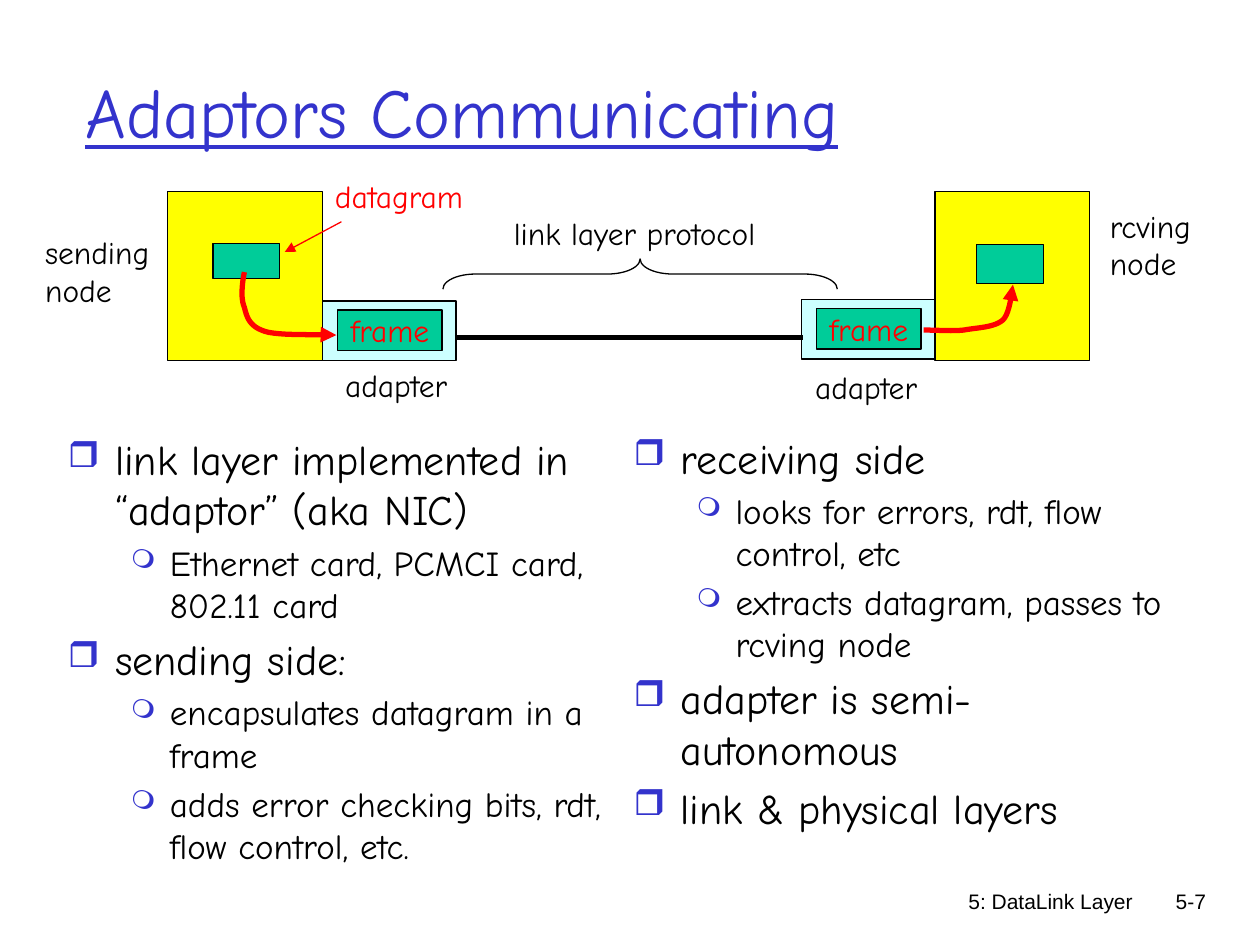
from dataclasses import dataclass

from lxml import etree
from pptx import Presentation
from pptx.dml.color import RGBColor
from pptx.enum.shapes import MSO_CONNECTOR, MSO_SHAPE
from pptx.enum.text import MSO_ANCHOR, PP_ALIGN
from pptx.oxml.ns import qn
from pptx.util import Emu, Inches, Pt

STRAIGHT = MSO_CONNECTOR.STRAIGHT
RECTANGLE, BRACE = MSO_SHAPE.RECTANGLE, MSO_SHAPE.LEFT_BRACE
TOP, MIDDLE = MSO_ANCHOR.TOP, MSO_ANCHOR.MIDDLE
LEFT, CENTER, RIGHT = PP_ALIGN.LEFT, PP_ALIGN.CENTER, PP_ALIGN.RIGHT

COLUMNS, ROWS = 100, 75
WIDTH, HEIGHT = Inches(10), Inches(7.5)
COLORS = {"ink": "000000", "blue": "3333CC", "red": "FF0000", "node": "FFFF00",
          "adapter": "CCFFFF", "packet": "00CC99"}
HAND, PLAIN = "Comic Neue", "Arial"
THIN, THICK = 0.75, 3
CURVE_STEPS = 12


@dataclass
class Area:
    """A rectangle in grid columns and rows."""
    column: float
    row: float
    columns: float
    rows: float

    def lengths(self) -> tuple:
        return across(self.column), down(self.row), across(self.columns), down(self.rows)


@dataclass
class Label:
    text: str
    area: Area
    size: float = 18
    color: str = "ink"
    font: str = HAND
    align: PP_ALIGN = LEFT
    anchor: MSO_ANCHOR = TOP
    underline: bool = False


@dataclass
class Block:
    area: Area
    fill: str
    text: str = ""


@dataclass
class Bullet:
    """How one outline level looks; lengths in grid columns."""
    mark: str
    mark_percent: int
    size: float
    margin: float
    hanging: float


BULLETS = [Bullet("❒", 85, 24, 3.75, 3.75), Bullet("❍", 75, 20, 8.1, 3.1)]

LABELS = [
    Label("5: DataLink Layer", Area(59.2, 70, 31.7, 5), 12, font=PLAIN, align=RIGHT),
    Label("5-7", Area(89.3, 70, 7.4, 5), 12, font=PLAIN, align=RIGHT),
    Label("Adaptors Communicating", Area(5.8, 2.5, 85, 12.5), 40, "blue",
          anchor=MIDDLE, underline=True),
    Label("sending\nnode", Area(2.6, 18, 10.7, 7)),
    Label("rcving\nnode", Area(87.1, 15.9, 9, 7)),
    Label("datagram", Area(25.6, 13.6, 13, 4), color="red"),
    Label("adapter", Area(26.4, 28.6, 11.1, 4)),
    Label("adapter", Area(63.7, 28.7, 11.1, 4)),
    Label("link layer protocol", Area(39.8, 16.5, 23, 4)),
]

OUTLINES = [
    (Area(4.4, 33.9, 44.5, 33.1), [
        (0, "link layer implemented in “adaptor” (aka NIC)"),
        (1, "Ethernet card, PCMCI card, 802.11 card"),
        (0, "sending side:"),
        (1, "encapsulates datagram in a frame"),
        (1, "adds error checking bits, rdt, flow control, etc.")]),
    (Area(49.3, 33.8, 44.7, 32.7), [
        (0, "receiving side"),
        (1, "looks for errors, rdt, flow control, etc"),
        (1, "extracts datagram, passes to rcving node"),
        (0, "adapter is semi-autonomous"),
        (0, "link & physical layers")]),
]


def adapter_blocks(column: float, row: float) -> list[Block]:
    return [Block(Area(column, row, 10.6, 4.7), "adapter"),
            Block(Area(column + 1.2, row + 0.7, 8.3, 3.2), "packet", "frame")]


BLOCKS = [
    *adapter_blocks(25.6, 23.9),
    *adapter_blocks(63.6, 23.8),
    Block(Area(74.2, 15.2, 12.3, 13.4), "node"),
    Block(Area(77.5, 19.4, 5.3, 3.1), "packet"),
    Block(Area(13.3, 15.2, 12.3, 13.4), "node"),
    Block(Area(16.9, 19.3, 5.3, 2.8), "packet"),
]

# Each path is a start point followed by groups of three Bézier points.
PACKET_PATHS = [
    [(19.4, 21.6), (19.2, 22.6), (19.1, 23.7), (19.4, 24.4), (19.6, 25.2),
     (19.8, 25.9), (21, 26.3), (22.2, 26.7), (25.7, 26.5), (26.7, 26.6)],
    [(73.3, 26.2), (74.4, 26.2), (75.5, 26.3), (76.5, 26.2), (77.6, 26),
     (78.9, 26), (79.6, 25.4), (80.2, 24.8), (80.3, 23), (80.4, 22.6)],
]


def across(columns: float) -> Emu:
    return Emu(round(WIDTH * columns / COLUMNS))


def down(rows: float) -> Emu:
    return Emu(round(HEIGHT * rows / ROWS))


def paint(color: str) -> RGBColor:
    return RGBColor.from_string(COLORS[color])


def style_line(shape, color: str, width: float, arrow: bool = False) -> None:
    shape.line.color.rgb = paint(color)
    shape.line.width = Pt(width)
    if arrow:
        etree.SubElement(shape.line._get_or_add_ln(), qn("a:tailEnd"), type="triangle")


def write(para, text: str, size: float, color: str, font: str = HAND,
          underline: bool = False) -> None:
    span = para.add_run()
    span.text = text
    span.font.color.rgb = paint(color)
    formats = {"size": Pt(size), "name": font, "underline": underline}
    for name, value in formats.items():
        setattr(span.font, name, value)


def paragraphs(frame, count: int) -> list:
    return [frame.paragraphs[0]] + [frame.add_paragraph() for _ in range(count - 1)]


def add_label(page, label: Label) -> None:
    frame = page.shapes.add_textbox(*label.area.lengths()).text_frame
    frame.word_wrap = True
    frame.vertical_anchor = label.anchor
    lines = label.text.split("\n")
    for para, line in zip(paragraphs(frame, len(lines)), lines):
        para.alignment = label.align
        write(para, line, label.size, label.color, label.font, label.underline)


def add_outline(page, area: Area, items: list[tuple[int, str]]) -> None:
    frame = page.shapes.add_textbox(*area.lengths()).text_frame
    frame.word_wrap = True
    for para, (level, text) in zip(paragraphs(frame, len(items)), items):
        bullet = BULLETS[level]
        para.level = level
        para.space_before = Pt(bullet.size * 0.2)
        write(para, text, bullet.size, "ink")
        properties = para._p.get_or_add_pPr()
        properties.set("marL", str(across(bullet.margin)))
        properties.set("indent", str(-across(bullet.hanging)))
        tint = etree.SubElement(properties, qn("a:buClr"))
        etree.SubElement(tint, qn("a:srgbClr"), val=COLORS["blue"])
        etree.SubElement(properties, qn("a:buSzPct"), val=str(bullet.mark_percent * 1000))
        etree.SubElement(properties, qn("a:buChar"), char=bullet.mark)


def add_block(page, block: Block) -> None:
    box = page.shapes.add_shape(RECTANGLE, *block.area.lengths())
    box.shadow.inherit = False
    box.fill.solid()
    box.fill.fore_color.rgb = paint(block.fill)
    style_line(box, "ink", THIN)
    if block.text:
        frame = box.text_frame
        formats = {"word_wrap": False, "vertical_anchor": MIDDLE}
        for name, value in formats.items():
            setattr(frame, name, value)
        frame.paragraphs[0].alignment = CENTER
        write(frame.paragraphs[0], block.text, 18, "red")


def add_straight(page, start: tuple, end: tuple, color: str, width: float,
                 arrow: bool = False) -> None:
    line = page.shapes.add_connector(STRAIGHT, across(start[0]), down(start[1]),
                                     across(end[0]), down(end[1]))
    style_line(line, color, width, arrow)
    etree.SubElement(line._element.spPr, qn("a:effectLst"))


def curve_points(path: list[tuple]) -> list[tuple]:
    """Sample the cubic Bézier pieces of a path, in slide lengths."""
    points = []
    for first in range(0, len(path) - 1, 3):
        corners = path[first:first + 4]
        for step in range(1, CURVE_STEPS + 1):
            t = step / CURVE_STEPS
            weights = ((1 - t) ** 3, 3 * t * (1 - t) ** 2, 3 * t * t * (1 - t), t ** 3)
            x, y = (sum(w * corner[axis] for w, corner in zip(weights, corners))
                    for axis in (0, 1))
            points.append((across(x), down(y)))
    return points


def add_packet_arrow(page, path: list[tuple]) -> None:
    builder = page.shapes.build_freeform(across(path[0][0]), down(path[0][1]))
    builder.add_line_segments(curve_points(path), close=False)
    arrow = builder.convert_to_shape()
    arrow.shadow.inherit = False
    arrow.fill.background()
    style_line(arrow, "red", THICK, arrow=True)


def add_protocol_brace(page) -> None:
    brace = page.shapes.add_shape(BRACE, *Area(49.6, 6.1, 2.4, 31.3).lengths())
    brace.rotation = 90
    brace.adjustments[0] = 1.08
    brace.shadow.inherit = False
    brace.fill.background()
    style_line(brace, "ink", THIN)


def main() -> None:
    deck = Presentation()
    deck.slide_width, deck.slide_height = WIDTH, HEIGHT
    page = deck.slides.add_slide(deck.slide_layouts[6])
    for block in BLOCKS:
        add_block(page, block)
    add_straight(page, (36.1, 26.8), (63.7, 26.8), "ink", THICK)
    add_straight(page, (27.1, 17.6), (22.6, 20), "red", THIN, arrow=True)
    add_protocol_brace(page)
    for path in PACKET_PATHS:
        add_packet_arrow(page, path)
    for label in LABELS:
        add_label(page, label)
    for area, items in OUTLINES:
        add_outline(page, area, items)
    deck.save("out.pptx")


if __name__ == "__main__":
    main()
